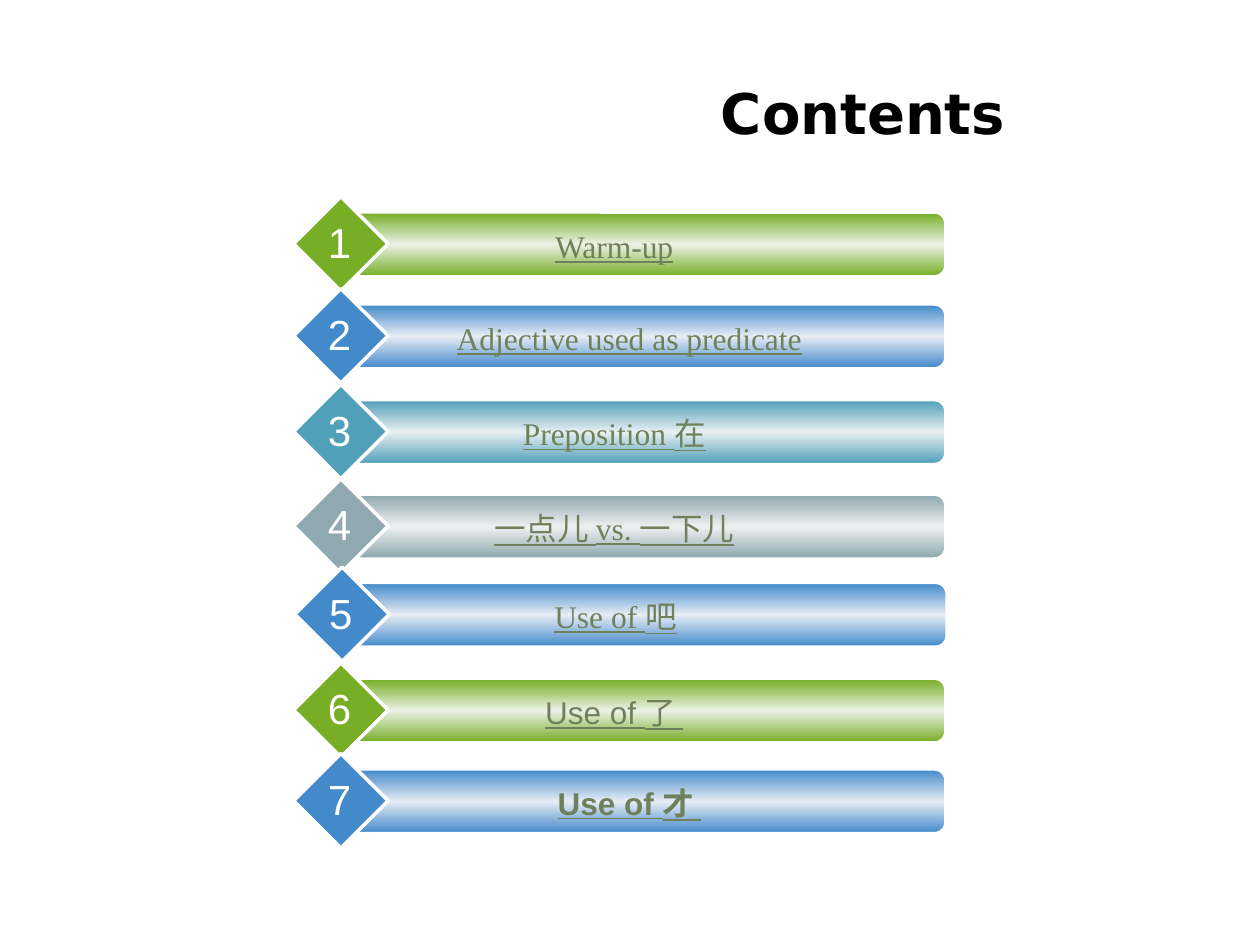
from copy import deepcopy

from pptx import Presentation
from pptx.dml.color import RGBColor
from pptx.enum.shapes import MSO_SHAPE
from pptx.enum.text import MSO_ANCHOR, MSO_AUTO_SIZE, PP_ALIGN
from pptx.util import Inches, Pt

COLORS = {
    "green": "77AE26",
    "pale green": "EBF1E6",
    "blue": "438ACB",
    "pale blue": "E7ECF5",
    "teal": "51A0B9",
    "pale teal": "E8EFF2",
    "gray": "90A8B0",
    "pale gray": "EDF0F1",
    "link": "6E815B",
    "white": "FFFFFF",
    "black": "000000",
}

SERIF = "Times New Roman"
SANS = "Arial"
DIAMOND_LEFT = 2.33
LABEL_LEFT = 3

ENTRIES = [
    {"text": "Warm-up", "top": 1.56, "color": "green"},
    {"text": "Adjective used as predicate", "top": 2.29, "color": "blue", "label_shift": 0.12},
    {"text": "Preposition 在", "top": 3.05, "color": "teal"},
    {"text": "一点儿 vs. 一下儿", "top": 3.8, "color": "gray"},
    {"text": "Use of 吧", "top": 4.5, "color": "blue", "shift": 0.01},
    {"text": "Use of 了 ", "top": 5.26, "color": "green", "font": SANS},
    {"text": "Use of 才 ", "top": 5.98, "color": "blue", "font": SANS, "bold": True,
     "label_shift": 0.12},
]


def rgb(name):
    return RGBColor.from_string(COLORS[name])


def write_text(frame, text, size, color, font, align=PP_ALIGN.CENTER, bold=False, underline=False):
    paragraph = frame.paragraphs[0]
    paragraph.alignment = align
    run = paragraph.add_run()
    run.text = text
    run.font.size = Pt(size)
    run.font.name = font
    run.font.bold = bold
    run.font.underline = underline
    run.font.color.rgb = rgb(color)


def add_text(shapes, left, top, width, height, text, wrap=True, **text_format):
    box = shapes.add_textbox(Inches(left), Inches(top), Inches(width), Inches(height))
    box.text_frame.word_wrap = wrap
    box.text_frame.auto_size = MSO_AUTO_SIZE.SHAPE_TO_FIT_TEXT
    write_text(box.text_frame, text, **text_format)


def add_outlined_shape(shapes, kind, left, top, width, height, line_width):
    shape = shapes.add_shape(kind, Inches(left), Inches(top), Inches(width), Inches(height))
    shape.shadow.inherit = False
    shape.line.color.rgb = rgb("white")
    shape.line.width = Pt(line_width)
    return shape


def fill_with_sheen(shape, color):
    shape.fill.gradient()
    shape.fill.gradient_angle = 90
    stop_list = shape._element.spPr.xpath("./a:gradFill/a:gsLst")[0]
    stop_list.append(deepcopy(stop_list[0]))
    names = [color, f"pale {color}", color]
    for stop, name, position in zip(shape.fill.gradient_stops, names, [0, 0.5, 1]):
        stop.color.rgb = rgb(name)
        stop.position = position


def add_entry(slide, number, text, top, color, font=SERIF, bold=False, shift=0, label_shift=0):
    shapes = slide.shapes.add_group_shape().shapes
    left = DIAMOND_LEFT + shift
    bar = add_outlined_shape(shapes, MSO_SHAPE.ROUNDED_RECTANGLE, left + 0.42, top + 0.13, 4.75, 0.5, 1)
    fill_with_sheen(bar, color)
    diamond = add_outlined_shape(shapes, MSO_SHAPE.DIAMOND, left, top, 0.75, 0.75, 2)
    diamond.fill.solid()
    diamond.fill.fore_color.rgb = rgb(color)
    add_text(shapes, LABEL_LEFT + shift + label_shift, top + 0.19, 3.75, 0.4, text,
             size=18, color="link", font=font, bold=bold, underline=True)
    add_text(shapes, left + 0.17, top + 0.11, 0.39, 0.5, str(number), wrap=False,
             size=24, color="white", font=SANS)


def set_title(slide, text):
    title = slide.shapes.title
    title.left, title.top = Inches(0.6), Inches(0.58)
    title.width, title.height = Inches(7.48), Inches(0.62)
    title.text_frame.vertical_anchor = MSO_ANCHOR.MIDDLE
    write_text(title.text_frame, text, size=32, color="black", font="DejaVu Sans",
               align=PP_ALIGN.RIGHT, bold=True)


def main():
    presentation = Presentation()
    presentation.slide_width = Inches(10)
    presentation.slide_height = Inches(7.5)
    slide = presentation.slides.add_slide(presentation.slide_layouts[5])
    set_title(slide, "Contents")
    for number, entry in enumerate(ENTRIES, start=1):
        add_entry(slide, number, **entry)
    presentation.save("out.pptx")


if __name__ == "__main__":
    main()
